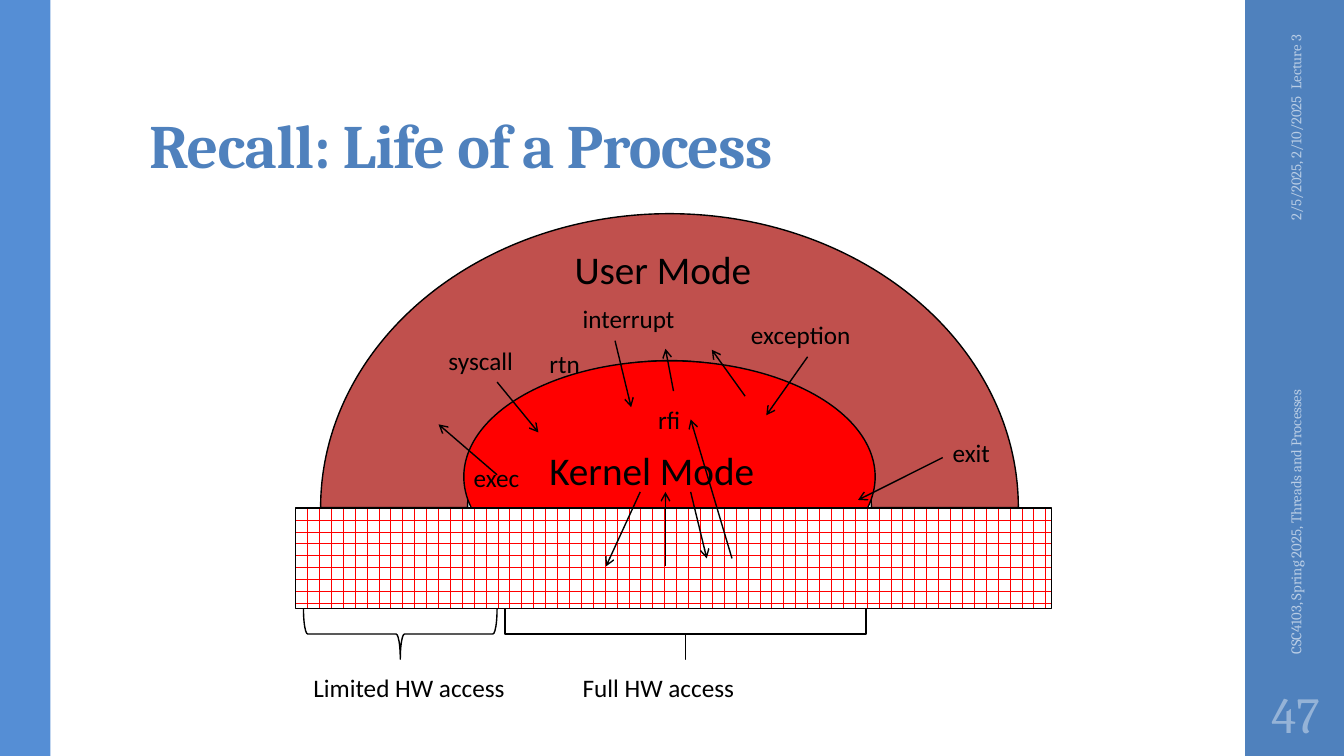
from lxml.etree import SubElement
from pptx import Presentation
from pptx.dml.color import RGBColor
from pptx.enum.dml import MSO_PATTERN
from pptx.enum.shapes import MSO_CONNECTOR, MSO_SHAPE
from pptx.enum.text import MSO_ANCHOR, MSO_AUTO_SIZE, PP_ALIGN
from pptx.oxml.ns import qn
from pptx.util import Inches, Pt

BLACK = RGBColor(0x00, 0x00, 0x00)
WHITE = RGBColor(0xFF, 0xFF, 0xFF)
BLUE = RGBColor(0x4F, 0x81, 0xBD)
LEFT_BLUE = RGBColor(0x55, 0x8E, 0xD5)
FOOTER_BLUE = RGBColor(0xB9, 0xCD, 0xE5)
NUMBER_BLUE = RGBColor(0x95, 0xB3, 0xD7)
USER_RED = RGBColor(0xC0, 0x50, 0x4D)
KERNEL_RED = RGBColor(0xFF, 0x00, 0x00)

# Label: text, left, top, width, height, size, wrap
LABELS = [
    ("User Mode", 5.6, 2.38, 2, 0.57, 28, False),
    ("Kernel Mode", 5.35, 4.38, 2.27, 0.57, 28, False),
    ("Full HW access", 5.68, 6.62, 1.79, 0.4, 18, False),
    ("Limited HW access", 3.01, 6.62, 2.2, 0.4, 18, False),
    ("exec", 4.6, 4.54, 0.68, 0.4, 18, False),
    ("syscall", 4.35, 3.38, 1, 0.4, 18, True),
    ("exit", 9.35, 4.29, 0.59, 0.4, 18, False),
    ("rtn", 5.35, 3.41, 0.52, 0.4, 18, False),
    ("interrupt", 5.68, 2.96, 1.42, 0.4, 18, True),
    ("rfi", 6.43, 3.96, 0.42, 0.4, 18, False),
    ("exception", 7.35, 3.12, 1.42, 0.4, 18, True),
]

# Arrow: start x, start y, end x, end y
ARROWS = [
    (4.93, 4.71, 4.35, 4.21),  # exec
    (4.93, 3.79, 5.34, 4.29),  # syscall
    (9.35, 4.54, 8.51, 4.96),  # exit
    (7.39, 3.93, 7.06, 3.47),  # return from exception
    (6.1, 3.38, 6.26, 4.04),  # interrupt
    (6.68, 3.88, 6.6, 3.46),  # return from interrupt
    (6.35, 4.88, 6.01, 5.62),  # kernel to hardware
    (6.6, 5.62, 6.6, 4.88),  # hardware to kernel
    (6.85, 4.88, 7.01, 5.54),  # kernel to hardware
    (7.26, 5.54, 6.85, 4.16),  # hardware to rfi
    (8.01, 3.54, 7.6, 4.12),  # exception
]


def add_figure(slide, preset, left, top, width, height, fill=None, outlined=True):
    figure = slide.shapes.add_shape(
        preset, Inches(left), Inches(top), Inches(width), Inches(height))
    figure.shadow.inherit = False
    if fill is None:
        figure.fill.background()
    else:
        figure.fill.solid()
        figure.fill.fore_color.rgb = fill
    if outlined:
        figure.line.color.rgb = BLACK
        figure.line.width = Pt(1)
    else:
        figure.line.fill.background()
    return figure


def add_text(slide, text, left, top, width, height, size, wrap=True,
             font="Calibri", color=BLACK, anchor=MSO_ANCHOR.TOP, align=PP_ALIGN.LEFT):
    box = slide.shapes.add_textbox(
        Inches(left), Inches(top), Inches(width), Inches(height))
    frame = box.text_frame
    frame.text = text
    frame.word_wrap = wrap
    frame.vertical_anchor = anchor
    paragraph = frame.paragraphs[0]
    paragraph.alignment = align
    run_font = paragraph.runs[0].font
    run_font.name = font
    run_font.size = Pt(size)
    run_font.color.rgb = color
    return box


def add_arrow(slide, x1, y1, x2, y2):
    arrow = slide.shapes.add_connector(
        MSO_CONNECTOR.STRAIGHT, Inches(x1), Inches(y1), Inches(x2), Inches(y2))
    arrow.line.color.rgb = BLACK
    arrow.line.width = Pt(1)
    SubElement(arrow.line._get_or_add_ln(), qn("a:tailEnd"), type="arrow")
    SubElement(arrow._element.spPr, qn("a:effectLst"))


def add_brace(slide, left, top, height):
    brace = add_figure(slide, MSO_SHAPE.RIGHT_BRACE, left, top, 0.5, height)
    brace.rotation = 90
    return brace


def add_frame(slide):
    # Side bands
    add_figure(slide, MSO_SHAPE.RECTANGLE, 12.35, 0, 1, 7.5, BLUE, outlined=False)
    add_figure(slide, MSO_SHAPE.RECTANGLE, 0, 0, 0.5, 7.5, LEFT_BLUE, outlined=False)

    # Title
    title = add_text(slide, "Recall: Life of a Process", 1.38, 0.32, 10.6, 1.53, 44,
                     font="Cambria", color=BLUE, anchor=MSO_ANCHOR.BOTTOM)
    title.text_frame.margin_top = Inches(0.03)
    heading = title.text_frame.paragraphs[0]
    heading.line_spacing = 0.9
    heading.runs[0].font.bold = True
    heading.runs[0]._r.get_or_add_rPr().set("spc", "-50")

    # Date, course and slide number
    date = add_text(slide, "2/5/2025, 2/10/2025  Lecture 3", 11.81, 1.09, 2.08, 0.4, 10.5,
                    font="Cambria", color=FOOTER_BLUE, anchor=MSO_ANCHOR.MIDDLE,
                    align=PP_ALIGN.RIGHT)
    course = add_text(slide, "CSC4103, Spring 2025, Threads and Processes",
                      10.89, 4.43, 3.92, 0.4, 10.5, font="Cambria",
                      color=FOOTER_BLUE, anchor=MSO_ANCHOR.MIDDLE)
    date.rotation = course.rotation = 270
    number = add_text(slide, "47", 12.35, 6.75, 1, 0.65, 36, font="Cambria",
                      color=NUMBER_BLUE, anchor=MSO_ANCHOR.MIDDLE, align=PP_ALIGN.CENTER)
    number.text_frame.margin_left = number.text_frame.margin_right = Inches(0.05)


def add_process_diagram(slide):
    # User and kernel modes
    add_figure(slide, MSO_SHAPE.BLOCK_ARC, 3.18, 2.12, 6.92, 5.83, USER_RED)
    add_figure(slide, MSO_SHAPE.OVAL, 4.6, 3.58, 4.08, 2.3, KERNEL_RED)

    # Hardware
    hardware = add_figure(slide, MSO_SHAPE.RECTANGLE, 2.93, 5.04, 7.5, 1)
    hardware.fill.patterned()
    hardware.fill.pattern = MSO_PATTERN.HORIZONTAL_BRICK
    hardware.fill.fore_color.rgb = KERNEL_RED
    hardware.fill.back_color.rgb = WHITE

    # Access braces
    add_brace(slide, 3.72, 5.33, 1.92)
    full_access = add_brace(slide, 6.55, 4.5, 3.58)
    full_access.adjustments[0] = 0

    # Transitions
    for arrow in ARROWS:
        add_arrow(slide, *arrow)
    for label in LABELS:
        box = add_text(slide, *label)
        box.text_frame.auto_size = MSO_AUTO_SIZE.SHAPE_TO_FIT_TEXT


def main():
    prs = Presentation()
    prs.slide_width = Inches(13.33)
    prs.slide_height = Inches(7.5)
    slide = prs.slides.add_slide(prs.slide_layouts[6])
    add_frame(slide)
    add_process_diagram(slide)
    prs.save("out.pptx")


if __name__ == "__main__":
    main()
